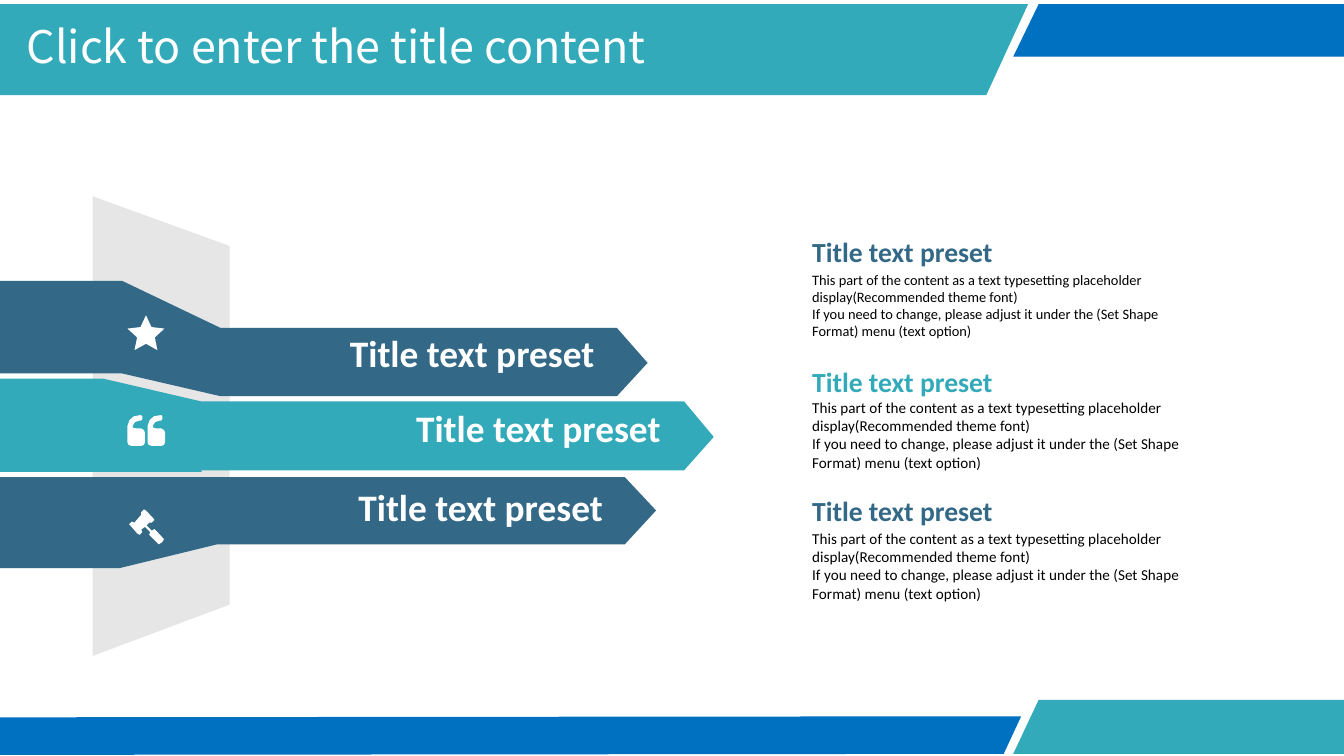
from dataclasses import dataclass

from pptx import Presentation
from pptx.dml.color import RGBColor
from pptx.enum.shapes import MSO_SHAPE as Preset
from pptx.enum.text import MSO_ANCHOR as Anchor, MSO_AUTO_SIZE as AutoSize, PP_ALIGN as Align
from pptx.shapes.autoshape import Shape
from pptx.slide import Slide
from pptx.text.text import TextFrame
from pptx.util import Cm, Pt

Points = list[tuple[float, float]]


@dataclass(frozen=True)
class Theme:
    blue: str = "0070C0"
    teal: str = "33AAB9"
    navy: str = "336987"
    gray: str = "E6E6E6"
    white: str = "FFFFFF"
    black: str = "000000"
    font: str = "Calibri"
    title_font: str = "Noto Sans CJK SC"
    title_size: float = 24
    ribbon_size: float = 20
    heading_size: float = 14.8
    body_size: float = 8.1
    small_body_size: float = 7.7


THEME = Theme()


@dataclass(frozen=True)
class Ribbon:
    outline: Points
    color: str
    anchor: Anchor
    bottom_inset: float


@dataclass(frozen=True)
class Description:
    color: str
    body_size: float
    body_height: float


LABEL = "Title text preset"
BODY = (
    "This part of the content as a text typesetting placeholder display(Recommended theme font)\n"
    "If you need to change, please adjust it under the (Set Shape Format) menu (text option)"
)

BANDS: list[tuple[Points, str]] = [
    ([(0, 13.56), (19.3, 13.54), (18.97, 14.25), (0, 14.27)], THEME.blue),
    ([(25.4, 13.23), (25.4, 14.25), (19.15, 14.25), (19.63, 13.23)], THEME.teal),
    ([(0, 0.08), (19.43, 0.08), (18.64, 1.8), (0, 1.8)], THEME.teal),
    ([(25.4, 0.08), (25.4, 1.07), (19.15, 1.07), (19.63, 0.08)], THEME.blue),
]
PANEL: Points = [(1.75, 3.71), (4.34, 4.65), (4.34, 11.43), (1.75, 12.4)]

RIBBONS = [
    Ribbon([(-0.1, 9.02), (-0.1, 10.74), (2.26, 10.74), (4.11, 10.29), (11.81, 10.29),
            (12.4, 9.65), (11.81, 9.02)], THEME.navy, Anchor.TOP, 0.13),
    Ribbon([(-0.41, 7.16), (-0.41, 8.92), (3.81, 8.92), (3.81, 8.89), (12.93, 8.89),
            (13.49, 8.26), (12.93, 7.59), (3.81, 7.59), (1.96, 7.16)],
           THEME.teal, Anchor.BOTTOM, 0.41),
    Ribbon([(-0.05, 5.31), (-0.05, 7.06), (2.31, 7.06), (4.17, 7.49), (11.66, 7.49),
            (12.24, 6.86), (11.66, 6.2), (4.17, 6.2), (2.31, 5.31)],
           THEME.navy, Anchor.BOTTOM, 0.41),
]

GAVEL: Points = [
    (3.07, 10.24), (3.05, 10.26), (3.0, 10.29), (2.97, 10.26), (2.84, 10.13), (2.82, 10.11),
    (2.84, 10.06), (2.74, 9.96), (2.67, 10.01), (2.69, 10.06), (2.64, 10.11), (2.6, 10.09),
    (2.46, 9.93), (2.44, 9.91), (2.49, 9.86), (2.54, 9.88), (2.67, 9.73), (2.67, 9.68),
    (2.72, 9.63), (2.76, 9.65), (2.9, 9.8), (2.92, 9.83), (2.87, 9.88), (2.82, 9.88),
    (2.77, 9.93), (2.87, 10.03), (2.92, 10.0), (2.95, 10.03), (3.07, 10.16), (3.1, 10.19),
]
QUOTE_MARK: Points = [
    (2.74, 8.36), (2.72, 8.41), (2.67, 8.43), (2.49, 8.43), (2.43, 8.41), (2.41, 8.36),
    (2.41, 8.05), (2.45, 7.94), (2.53, 7.87), (2.64, 7.85), (2.67, 7.85), (2.69, 7.87),
    (2.69, 7.92), (2.67, 7.95), (2.64, 7.95), (2.55, 7.98), (2.51, 8.05), (2.51, 8.08),
    (2.57, 8.1), (2.67, 8.1), (2.72, 8.13), (2.74, 8.18),
]
QUOTE_GAP = 0.38

DESCRIPTIONS = [
    Description(THEME.navy, THEME.small_body_size, 1.42),
    Description(THEME.teal, THEME.body_size, 1.42),
    Description(THEME.navy, THEME.body_size, 1.47),
]
DESCRIPTION_LEFT, DESCRIPTION_TOP, DESCRIPTION_STEP = 14.35, 4.45, 2.45
DESCRIPTION_WIDTH, HEADING_HEIGHT = 8.81, 0.61


def paint(shape: Shape, color: str) -> None:
    shape.fill.solid()
    shape.fill.fore_color.rgb = RGBColor.from_string(color)
    shape.line.fill.background()
    shape.shadow.inherit = False


def add_outline(slide: Slide, contours: list[Points], color: str) -> Shape:
    """Draw closed contours, given in centimetres, as one filled shape."""
    builder = None
    for contour in contours:
        corners = [(Cm(x), Cm(y)) for x, y in contour]
        if builder is None:
            builder = slide.shapes.build_freeform(*corners[0])
        else:
            builder.move_to(*corners[0])
        builder.add_line_segments(corners[1:], close=True)
    shape = builder.convert_to_shape()
    paint(shape, color)
    return shape


def write(frame: TextFrame, text: str, size: float, color: str, *, insets: tuple[float, ...],
          font: str = THEME.font, bold: bool = False, align: Align = Align.LEFT,
          anchor: Anchor = Anchor.MIDDLE) -> None:
    """Fill a frame with one paragraph; insets run left, top, right, bottom."""
    frame.word_wrap = True
    frame.auto_size = AutoSize.NONE
    frame.vertical_anchor = anchor
    (frame.margin_left, frame.margin_top,
     frame.margin_right, frame.margin_bottom) = map(Cm, insets)
    paragraph = frame.paragraphs[0]
    paragraph.text = text
    paragraph.alignment = align
    paragraph.font.name = font
    paragraph.font.size = Pt(size)
    paragraph.font.bold = bold
    paragraph.font.color.rgb = RGBColor.from_string(color)


def add_ribbon(slide: Slide, ribbon: Ribbon) -> None:
    shape = add_outline(slide, [ribbon.outline], ribbon.color)
    write(shape.text_frame, LABEL, THEME.ribbon_size, THEME.white, bold=True, align=Align.RIGHT,
          anchor=ribbon.anchor, insets=(0.13, 0.13, 1, ribbon.bottom_inset))


def add_icons(slide: Slide) -> None:
    add_outline(slide, [GAVEL], THEME.white)
    second_mark = [(x + QUOTE_GAP, y) for x, y in QUOTE_MARK]
    add_outline(slide, [QUOTE_MARK, second_mark], THEME.white)
    star = slide.shapes.add_shape(Preset.STAR_5_POINT, Cm(2.41), Cm(5.96), Cm(0.7), Cm(0.66))
    star.adjustments[0] = 0.24
    paint(star, THEME.white)


def add_description(slide: Slide, description: Description, top: float) -> None:
    insets = (1, 0, 0.79, 0)
    left, width = Cm(DESCRIPTION_LEFT), Cm(DESCRIPTION_WIDTH)
    heading = slide.shapes.add_textbox(left, Cm(top), width, Cm(HEADING_HEIGHT))
    write(heading.text_frame, LABEL, THEME.heading_size, description.color,
          bold=True, insets=insets)
    body = slide.shapes.add_textbox(left, Cm(top + HEADING_HEIGHT), width,
                                    Cm(description.body_height))
    write(body.text_frame, BODY, description.body_size, THEME.black, insets=insets)


def add_title(slide: Slide) -> None:
    title = slide.shapes.title
    title.left, title.top, title.width, title.height = Cm(0.5), Cm(0.3), Cm(13), Cm(1.12)
    write(title.text_frame, "Click to enter the title content", THEME.title_size, THEME.white,
          font=THEME.title_font, insets=(0, 0.13, 0, 0.13))
    slide.shapes.element.append(title.element)  # bring in front of the banner


def main() -> None:
    presentation = Presentation()
    presentation.slide_width, presentation.slide_height = Cm(25.4), Cm(14.29)
    slide = presentation.slides.add_slide(presentation.slide_layouts[5])
    for outline, color in BANDS:
        add_outline(slide, [outline], color)
    add_outline(slide, [PANEL], THEME.gray)
    for ribbon in RIBBONS:
        add_ribbon(slide, ribbon)
    add_icons(slide)
    for row, description in enumerate(DESCRIPTIONS):
        add_description(slide, description, DESCRIPTION_TOP + row * DESCRIPTION_STEP)
    add_title(slide)
    presentation.save("out.pptx")


if __name__ == "__main__":
    main()
